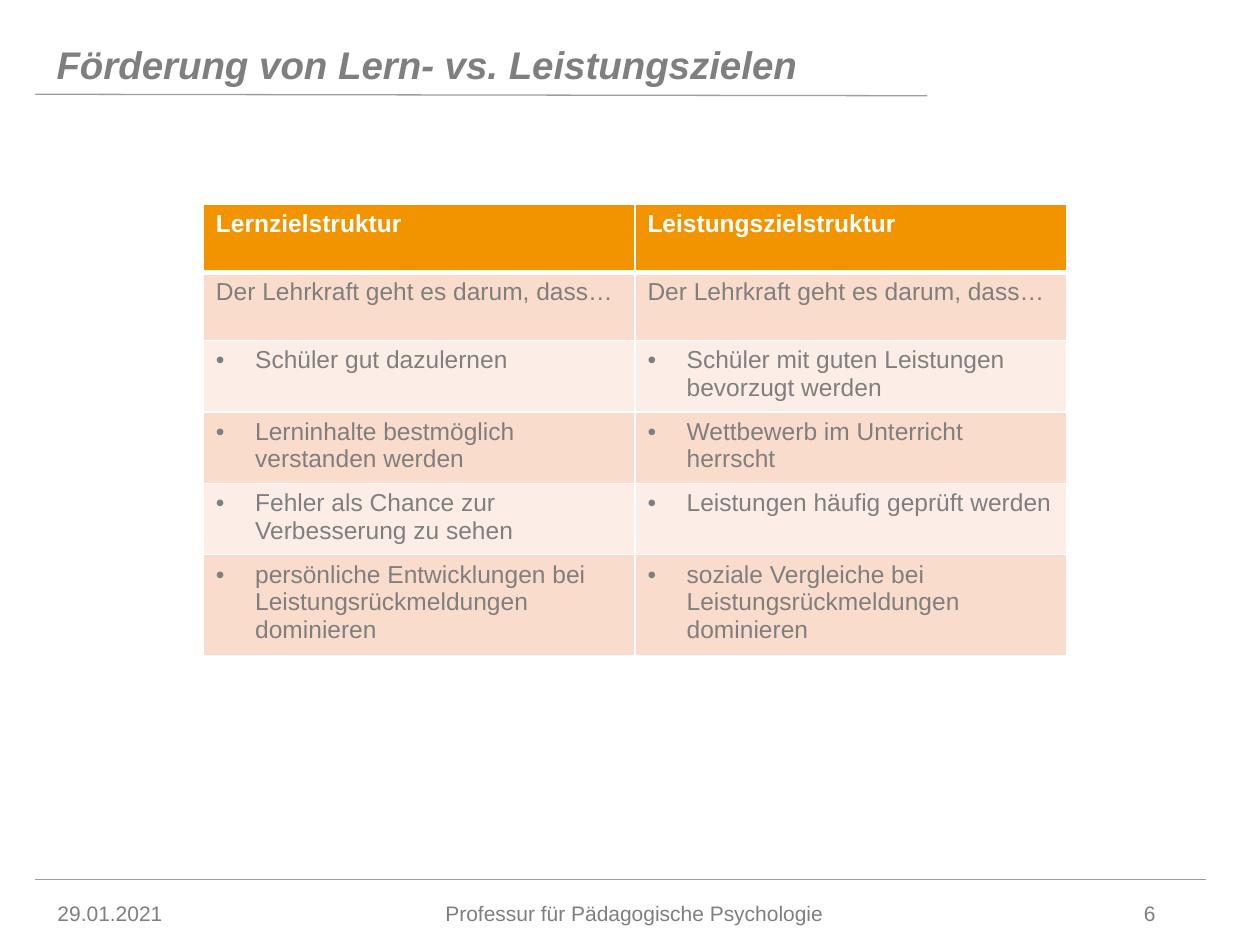
from lxml import etree
from pptx import Presentation
from pptx.dml.color import RGBColor
from pptx.enum.shapes import MSO_CONNECTOR
from pptx.enum.text import MSO_ANCHOR, PP_ALIGN
from pptx.oxml.ns import qn
from pptx.util import Cm, Pt

LEFT, CENTER = PP_ALIGN.LEFT, PP_ALIGN.CENTER
MIDDLE, BOTTOM = MSO_ANCHOR.MIDDLE, MSO_ANCHOR.BOTTOM
STRAIGHT = MSO_CONNECTOR.STRAIGHT
FONT = "Arial"
COLORS = {
    "text": "7F7F7F",
    "rule": "999F9E",
    "white": "FFFFFF",
    "header": "F29400",
    "dark_band": "FADCCC",
    "light_band": "FCEEE7",
}
GOALS = [
    ("Lernzielstruktur", "Leistungszielstruktur"),
    ("Der Lehrkraft geht es darum, dass…",) * 2,
    ("Schüler gut dazulernen", "Schüler mit guten Leistungen bevorzugt werden"),
    ("Lerninhalte bestmöglich verstanden werden", "Wettbewerb im Unterricht herrscht"),
    ("Fehler als Chance zur Verbesserung zu sehen", "Leistungen häufig geprüft werden"),
    ("persönliche Entwicklungen bei Leistungsrückmeldungen dominieren",
     "soziale Vergleiche bei Leistungsrückmeldungen dominieren"),
]


def rgb(name):
    return RGBColor.from_string(COLORS[name])


def add_run(p, text, size, color="text", bold=False, italic=False):
    r = p.add_run()
    r.text = text
    r.font.name = FONT
    r.font.size = Pt(size)
    r.font.bold = bold
    r.font.italic = italic
    r.font.color.rgb = rgb(color)


def add_text(slide, box, text, size, align=LEFT, anchor=MIDDLE, **style):
    tf = slide.shapes.add_textbox(*(Cm(v) for v in box)).text_frame
    tf.word_wrap = True
    tf.vertical_anchor = anchor
    p = tf.paragraphs[0]
    p.alignment = align
    add_run(p, text, size, **style)


def add_rule(slide, x1, y1, x2, y2):
    line = slide.shapes.add_connector(STRAIGHT, Cm(x1), Cm(y1), Cm(x2), Cm(y2))
    line.line.color.rgb = rgb("rule")
    line.line.width = Pt(0.75)
    etree.SubElement(line._element.spPr, qn("a:effectLst"))


def set_borders(cell, widths):
    tc_pr = cell._tc.get_or_add_tcPr()
    for side, width in zip("LRTB", widths):
        ln = etree.SubElement(tc_pr, qn(f"a:ln{side}"), w=str(Pt(width)))
        fill = etree.SubElement(ln, qn("a:solidFill"))
        etree.SubElement(fill, qn("a:srgbClr"), val=COLORS["white"])


def add_bullet(p):
    p_pr = p._p.get_or_add_pPr()
    p_pr.set("marL", str(Cm(0.79)))
    p_pr.set("indent", str(-Cm(0.79)))
    etree.SubElement(p_pr, qn("a:buFont"), typeface=FONT)
    etree.SubElement(p_pr, qn("a:buChar"), char="•")


def add_title(slide, x, y, w, h):
    add_rule(slide, x - 0.18, y + 1.42, x + w - 0.18, y + 1.45)
    add_text(slide, (x, y, w, h), "Förderung von Lern- vs. Leistungszielen", 22,
             anchor=BOTTOM, bold=True, italic=True)


def add_goal_table(slide, x, y, w, row_h, last_h):
    h = row_h * (len(GOALS) - 1) + last_h
    table = slide.shapes.add_table(len(GOALS), 2, Cm(x), Cm(y), Cm(w), Cm(h)).table
    table.horz_banding = False
    for col in table.columns:
        col.width = Cm(w / 2)
    for i, texts in enumerate(GOALS):
        table.rows[i].height = Cm(row_h if i < len(GOALS) - 1 else last_h)
        is_header = i == 0
        band = "header" if is_header else "dark_band" if i % 2 else "light_band"
        top, bottom = 3 if i == 1 else 1, 3 if is_header else 1
        for j, text in enumerate(texts):
            cell = table.cell(i, j)
            set_borders(cell, (1, 1, top, bottom))
            cell.fill.solid()
            cell.fill.fore_color.rgb = rgb(band)
            p = cell.text_frame.paragraphs[0]
            if i > 1:
                add_bullet(p)
            add_run(p, text, 14, "white" if is_header else "text", bold=is_header)


def add_footer(slide, x, y, w, h):
    add_rule(slide, x, y, x + w, y)
    top = y + 0.18
    add_text(slide, (x + 0.2, top, 3, h), "29.01.2021", 12)
    add_text(slide, (x + 3.38, top, 17.4, h),
             "Professur für Pädagogische Psychologie", 12, CENTER)
    add_text(slide, (x + w - 1.5, top, 1.5, h), "6", 12)


def main():
    prs = Presentation()
    prs.slide_width, prs.slide_height = Cm(25.4), Cm(19.05)
    slide = prs.slides.add_slide(prs.slide_layouts[6])
    add_title(slide, 0.89, 0.48, 17.98, 1.4)
    add_goal_table(slide, 4.1, 4.12, 17.4, 1.37, 1.91)
    add_footer(slide, 0.71, 17.73, 23.6, 1)
    prs.save("out.pptx")


if __name__ == "__main__":
    main()
